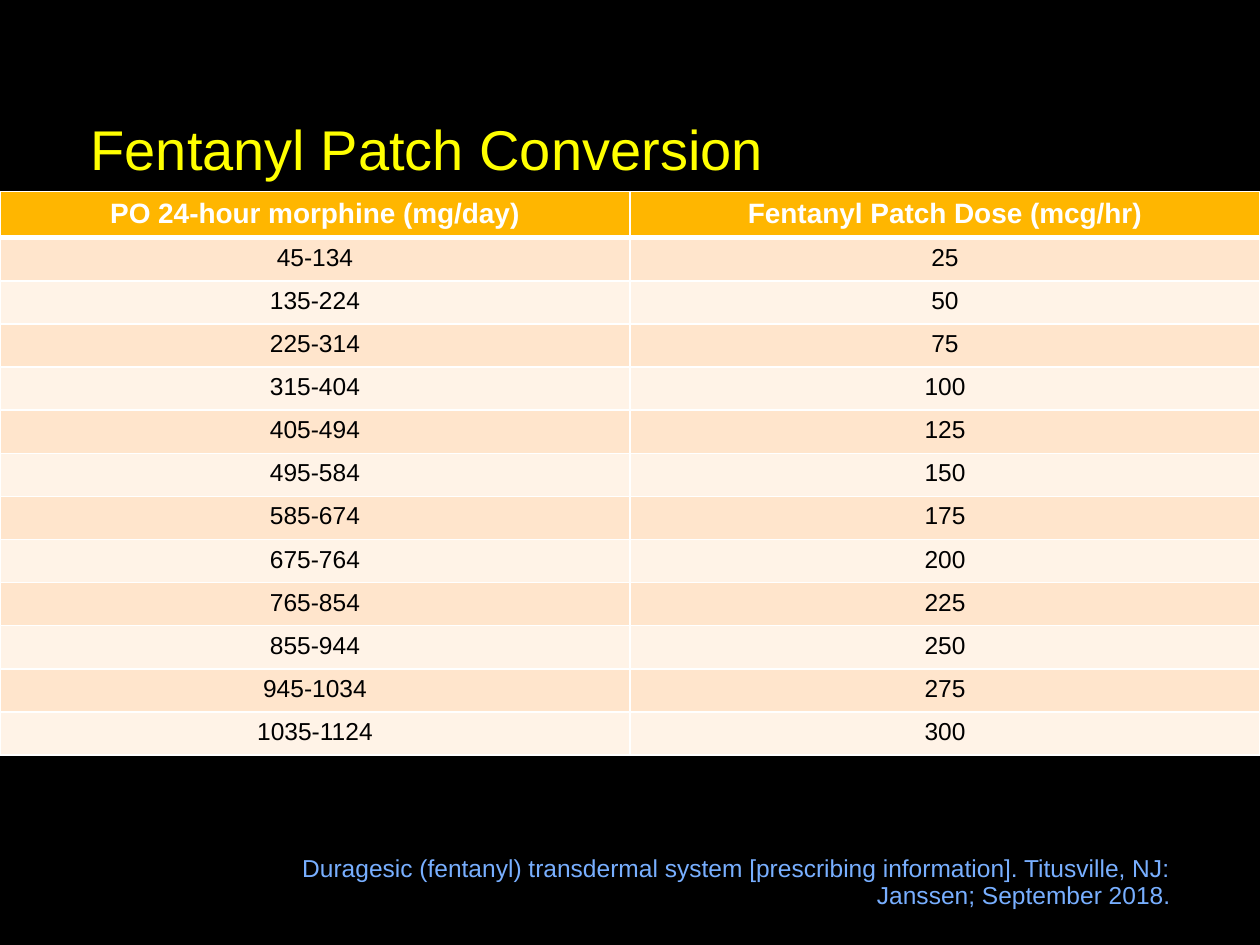
from lxml import etree
from pptx import Presentation
from pptx.dml.color import RGBColor
from pptx.enum.text import MSO_ANCHOR, PP_ALIGN
from pptx.oxml.ns import qn
from pptx.util import Inches, Pt

LEFT, CENTER, RIGHT = PP_ALIGN.LEFT, PP_ALIGN.CENTER, PP_ALIGN.RIGHT
TOP, BOTTOM = MSO_ANCHOR.TOP, MSO_ANCHOR.BOTTOM


def rgb(value):
    return RGBColor.from_string(value)


class Deck:
    """Hold the style and the current slide, and add elements by shares of its size."""

    font = "Arial"
    white, black, accent = "FFFFFF", "000000", "FFB600"
    bands = ("FFE5CC", "FFF3E7")

    def __init__(self, width, height):
        self.prs = Presentation()
        self.prs.slide_width, self.prs.slide_height = Inches(width), Inches(height)
        self.s = self.prs.slides.add_slide(self.prs.slide_layouts[6])
        self.fill(self.s.background.fill, self.black)

    def box(self, x, y, w, h):
        sw, sh = self.prs.slide_width, self.prs.slide_height
        return [round(v) for v in (x * sw / 100, y * sh / 100, w * sw / 100, h * sh / 100)]

    def fill(self, fill, color):
        fill.solid()
        fill.fore_color.rgb = rgb(color)

    def add_run(self, tf, text, size, color, align=LEFT, bold=False, spacing=None):
        p = tf.paragraphs[0]
        p.alignment, p.line_spacing = align, spacing
        r = p.add_run()
        r.text = text
        for name, value in {"name": self.font, "size": Pt(size), "bold": bold}.items():
            setattr(r.font, name, value)
        r.font.color.rgb = rgb(color)

    def text(self, area, text, size, color, align=LEFT, anchor=TOP, bottom=0.0):
        tf = self.s.shapes.add_textbox(*self.box(*area)).text_frame
        layout = {"word_wrap": True, "vertical_anchor": anchor,
                  "margin_left": 0, "margin_right": 0,
                  "margin_top": Inches(0.05), "margin_bottom": Inches(bottom)}
        for name, value in layout.items():
            setattr(tf, name, value)
        self.add_run(tf, text, size, color, align, spacing=0.9)

    def border(self, cell, **widths):
        tcPr = cell._tc.get_or_add_tcPr()
        for side, width in widths.items():
            ln = etree.SubElement(tcPr, qn(f"a:ln{side}"), w=str(int(Pt(width))))
            solid = etree.SubElement(ln, qn("a:solidFill"))
            etree.SubElement(solid, qn("a:srgbClr"), val=self.white)

    def table(self, area, rows):
        box = self.box(*area)
        table = self.s.shapes.add_table(len(rows), len(rows[0]), *box).table
        for i, row in enumerate(rows):
            table.rows[i].height = box[3] // len(rows)
            head = i == 0
            size, color = (16, self.white) if head else (14, self.black)
            back = self.accent if head else self.bands[(i - 1) % 2]
            for j, value in enumerate(row):
                cell = table.cell(i, j)
                self.add_run(cell.text_frame, value, size, color, CENTER, bold=head)
                self.border(cell, L=1, R=1, T=3 if i == 1 else 1, B=3 if head else 1)
                self.fill(cell.fill, back)


def main():
    deck = Deck(10, 7.5)
    deck.text((7.2, 0, 85.6, 20), "Fentanyl Patch Conversion", 32, "FFFF00",
              anchor=BOTTOM, bottom=0.05)
    doses = [(f"{45 + 90 * i}-{134 + 90 * i}", str(25 * (i + 1))) for i in range(12)]
    header = ("PO 24-hour morphine (mg/day)", "Fentanyl Patch Dose (mcg/hr)")
    deck.table((0, 20.27, 100, 59.33), [header, *doses])
    deck.text((21.7, 90, 71.2, 6.7),
              "Duragesic (fentanyl) transdermal system [prescribing information]. "
              "Titusville, NJ: Janssen; September 2018.", 14, "78AFFF", align=RIGHT)
    deck.prs.save("out.pptx")


if __name__ == "__main__":
    main()
